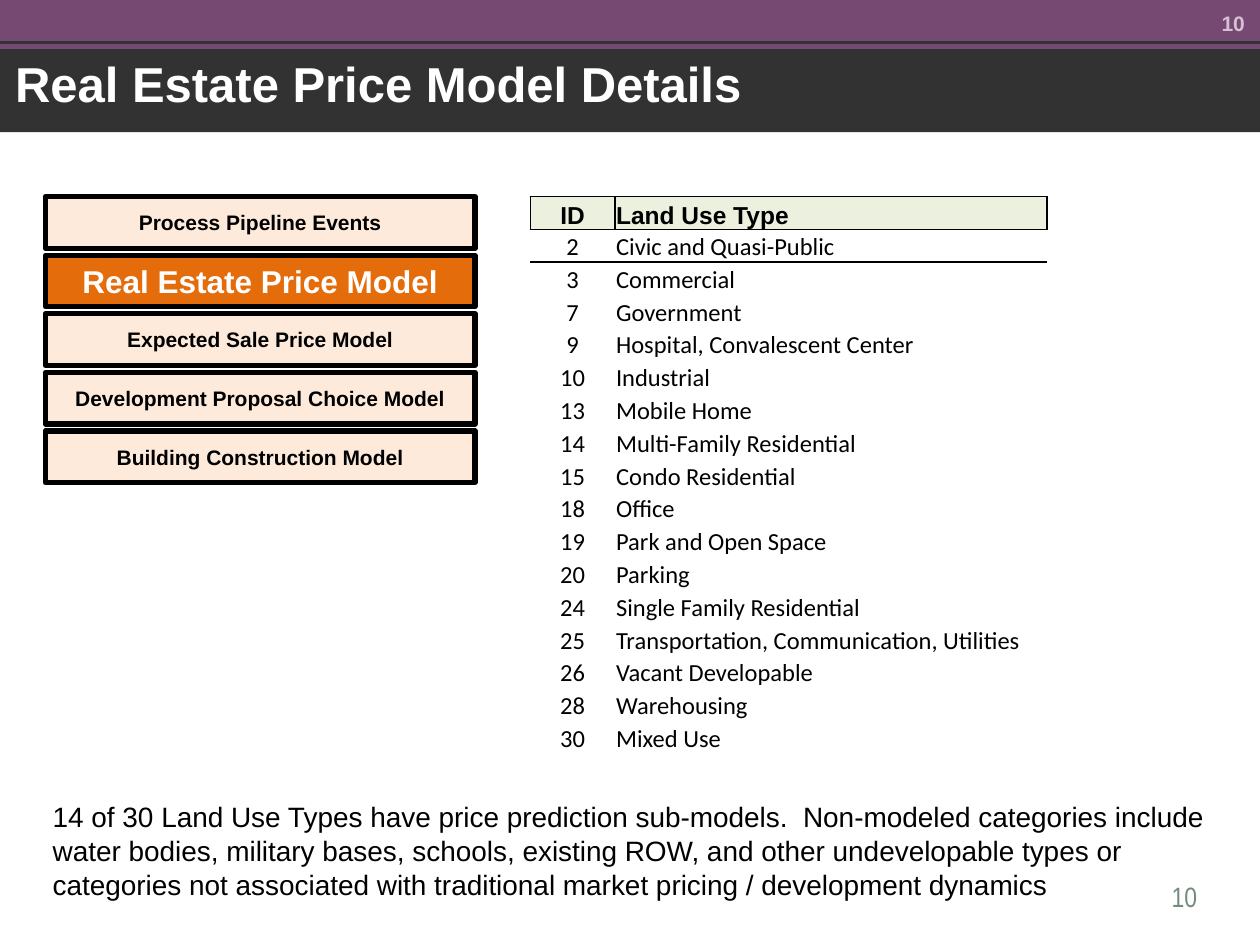
from lxml.etree import SubElement
from pptx import Presentation
from pptx.dml.color import RGBColor
from pptx.enum.shapes import MSO_CONNECTOR, MSO_SHAPE
from pptx.enum.text import MSO_ANCHOR, MSO_AUTO_SIZE, PP_ALIGN
from pptx.oxml.ns import qn
from pptx.util import Inches, Pt

HUES = {
    "plum": "754972",
    "dark": "323232",
    "mauve": "D7BFD6",
    "sage": "748C7B",
    "peach": "FDEADA",
    "orange": "E46C0A",
    "green": "EBF1DE",
    "black": "000000",
    "white": "FFFFFF",
}
PLAIN = "{2D5ABB26-0587-4C30-8999-92F81FD0307C}"
STEPS = [
    "Process Pipeline Events",
    "Real Estate Price Model",
    "Expected Sale Price Model",
    "Development Proposal Choice Model",
    "Building Construction Model",
]
USES = [
    ("ID", "Land Use Type"),
    ("2", "Civic and Quasi-Public"),
    ("3", "Commercial"),
    ("7", "Government"),
    ("9", "Hospital, Convalescent Center"),
    ("10", "Industrial"),
    ("13", "Mobile Home"),
    ("14", "Multi-Family Residential"),
    ("15", "Condo Residential"),
    ("18", "Office"),
    ("19", "Park and Open Space"),
    ("20", "Parking"),
    ("24", "Single Family Residential"),
    ("25", "Transportation, Communication, Utilities"),
    ("26", "Vacant Developable"),
    ("28", "Warehousing"),
    ("30", "Mixed Use"),
]
NOTE = (
    "14 of 30 Land Use Types have price prediction sub-models.  "
    "Non-modeled categories include water bodies, military bases, schools, "
    "existing ROW, and other undevelopable types or categories not associated "
    "with traditional market pricing / development dynamics"
)


class Deck:
    def __init__(self, slide, font="Arial"):
        self.slide = slide
        self.font = font

    def hue(self, name):
        return RGBColor.from_string(HUES[name])

    def put(self, frame, text, size, hue="black", bold=False, font=None,
            align=PP_ALIGN.LEFT):
        para = frame.paragraphs[0]
        para.alignment = align
        run = para.add_run()
        run.text = text
        run.font.name = font or self.font
        run.font.size = Pt(size)
        run.font.bold = bold
        run.font.color.rgb = self.hue(hue)
        return para

    def text(self, area, text, size, pad=True, grow=False, **look):
        box = self.slide.shapes.add_textbox(*map(Inches, area))
        frame = box.text_frame
        frame.word_wrap = True
        if grow:
            frame.auto_size = MSO_AUTO_SIZE.SHAPE_TO_FIT_TEXT
        if not pad:
            frame.margin_left = frame.margin_right = 0
            frame.margin_top = frame.margin_bottom = 0
        return self.put(frame, text, size, **look)

    def rect(self, area, fill, edge=0):
        box = self.slide.shapes.add_shape(MSO_SHAPE.RECTANGLE, *map(Inches, area))
        box.shadow.inherit = False
        box.fill.solid()
        box.fill.fore_color.rgb = self.hue(fill)
        if edge:
            box.line.color.rgb = self.hue("black")
            box.line.width = Pt(edge)
        else:
            box.line.fill.background()
        return box

    def step(self, area, text, size, fill, hue):
        frame = self.rect(area, fill, 3).text_frame
        frame.word_wrap = True
        frame.vertical_anchor = MSO_ANCHOR.MIDDLE
        self.put(frame, text, size, hue, True, align=PP_ALIGN.CENTER)

    def line(self, ends, hue, width):
        rule = self.slide.shapes.add_connector(
            MSO_CONNECTOR.STRAIGHT, *map(Inches, ends))
        rule.line.color.rgb = self.hue(hue)
        rule.line.width = Pt(width)
        SubElement(rule._element.spPr, qn("a:effectLst"))

    def edge(self, cell, sides):
        props = cell._tc.get_or_add_tcPr()
        for side in sides:
            rule = SubElement(props, qn(f"a:ln{side}"), w=str(Pt(1)))
            fill = SubElement(rule, qn("a:solidFill"))
            SubElement(fill, qn("a:srgbClr"), val=HUES["black"])

    def cell(self, cell, text, head, align):
        cell.margin_left = cell.margin_right = cell.margin_top = Inches(0.01)
        cell.margin_bottom = 0
        cell.vertical_anchor = MSO_ANCHOR.BOTTOM
        if head:
            self.edge(cell, "LRTB")
            cell.fill.solid()
            cell.fill.fore_color.rgb = self.hue("green")
        else:
            cell.fill.background()
        self.put(cell.text_frame, text, 14, bold=head,
                 font=None if head else "Calibri", align=align)

    def table(self, area, rows, widths):
        grid = self.slide.shapes.add_table(
            len(rows), len(widths), *map(Inches, area)).table
        grid.first_row = grid.horz_banding = False
        grid._tbl.tblPr.find(qn("a:tableStyleId")).text = PLAIN
        for col, width in zip(grid.columns, widths):
            col.width = Inches(width)
        for r, row in enumerate(rows):
            for c, text in enumerate(row):
                cell = grid.cell(r, c)
                if r == 1:
                    self.edge(cell, "T")
                align = PP_ALIGN.LEFT if c else PP_ALIGN.CENTER
                self.cell(cell, text, r == 0, align)


def main():
    show = Presentation()
    show.slide_width, show.slide_height = Inches(10), Inches(7.5)
    deck = Deck(show.slides.add_slide(show.slide_layouts[6]))

    deck.rect((0, 0, 10, 0.41), "plum")
    deck.rect((0, 0.39, 10, 0.66), "dark")
    deck.line((0, 0.34, 10, 0.34), "dark", 1.5)
    deck.text((9.21, 0.08, 0.67, 0.26), "10", 12, pad=False, hue="mauve",
              bold=True, align=PP_ALIGN.RIGHT)
    title = deck.text((0.12, 0.48, 9.71, 0.42), "Real Estate Price Model Details",
                      28, pad=False, grow=True, hue="white", bold=True)
    title.line_spacing = 0.9
    deck.text((9.2, 6.93, 0.58, 0.33), "10", 16, hue="sage", font="Arial Narrow")

    for i, name in enumerate(STEPS):
        look = (18, "orange", "white") if i == 1 else (12, "peach", "black")
        deck.step((0.36, 1.56 + i * 0.465, 3.41, 0.41), name, *look)

    deck.text((0.32, 6.3, 9.46, 0.91), NOTE, 16, grow=True)
    deck.table((4.21, 1.56, 4.1, 4.43), USES, (0.67, 3.43))
    show.save("out.pptx")


if __name__ == "__main__":
    main()
